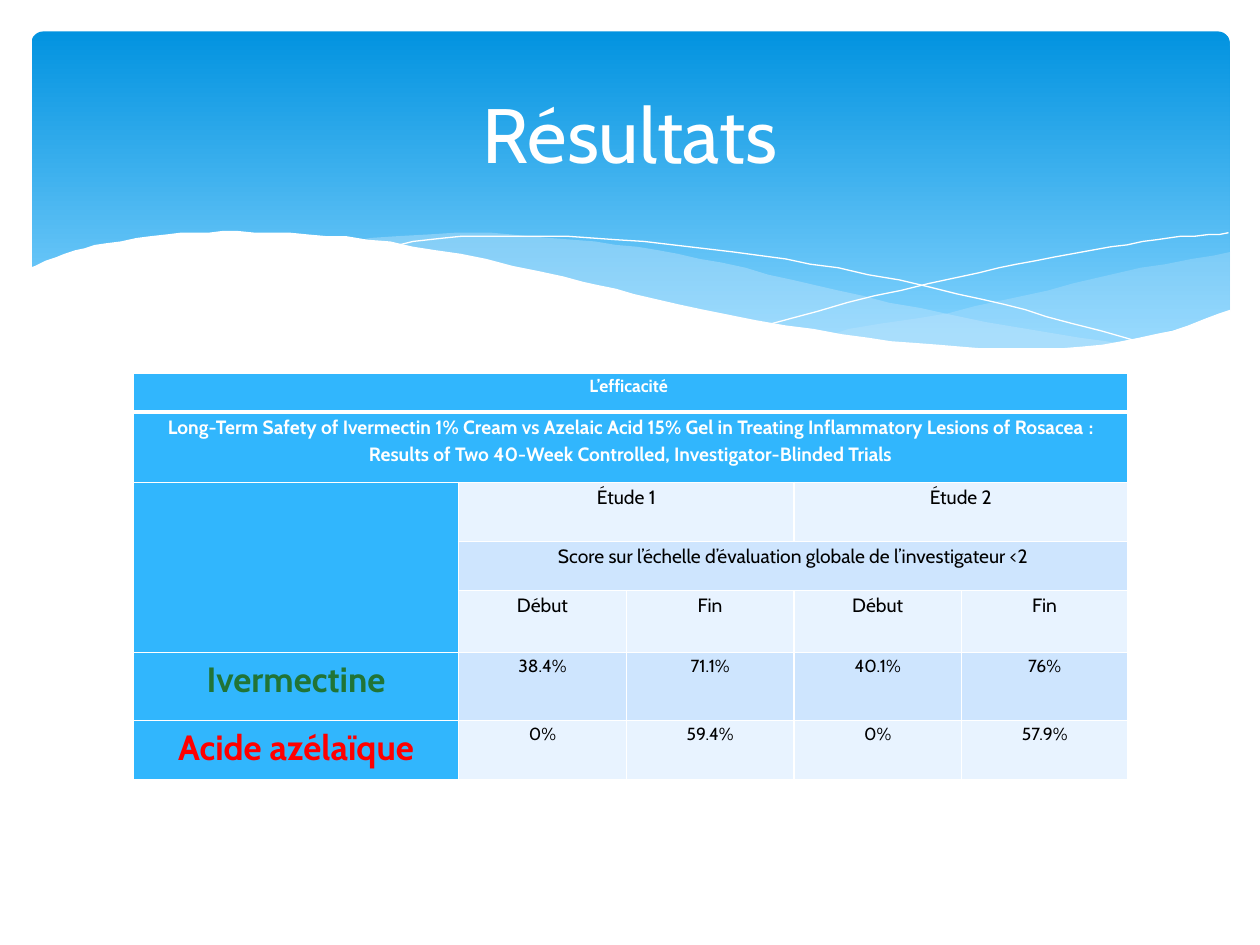
"""Build the results slide: a wave banner, a title and the efficacy table."""
import dataclasses

import pptx
import pptx.dml.color
import pptx.enum.shapes
import pptx.enum.text
import pptx.oxml
import pptx.oxml.ns
import pptx.util

Pt = pptx.util.Pt
RGB = pptx.dml.color.RGBColor.from_string


@dataclasses.dataclass(frozen=True)
class Theme:
    font: str = "Cabin"
    white: str = "FFFFFF"
    black: str = "000000"
    banner_top: str = "0293E0"
    banner_bottom: str = "83D3FE"
    wave: str = "C6E7FC"
    header: str = "31B6FD"
    light: str = "E8F3FF"
    medium: str = "CEE5FE"
    green: str = "217436"
    red: str = "FF0000"
    title_size: float = 44
    drug_size: float = 20
    body_size: float = 11
    small_size: float = 10


def draw_curve(shapes, knots, corners=(), closed=True):
    """Draw a smooth curve through the knots, then straight to the corners."""
    points = [knots[0]]
    padded = [knots[0], *knots, knots[-1]]
    for a, b, c, d in zip(padded, padded[1:], padded[2:], padded[3:]):
        for t in (0.25, 0.5, 0.75, 1):
            points.append(tuple(
                0.5 * (2 * q + (r - p) * t + (2 * p - 5 * q + 4 * r - s) * t ** 2
                       + (3 * q - p - 3 * r + s) * t ** 3)
                for p, q, r, s in zip(a, b, c, d)))
    points.extend(corners)
    builder = shapes.build_freeform(*points[0], scale=Pt(1))
    builder.add_line_segments(points[1:], close=closed)
    shape = builder.convert_to_shape()
    shape.shadow.inherit = False
    return shape


def add_text(paragraph, text, size, color, bold=False):
    """Add one centred run to the paragraph."""
    paragraph.alignment = pptx.enum.text.PP_ALIGN.CENTER
    run = paragraph.add_run()
    run.text = text
    run.font.name = theme.font
    run.font.size = Pt(size)
    run.font.bold = bold
    run.font.color.rgb = RGB(color)


theme = Theme()
presentation = pptx.Presentation()
presentation.slide_width = Pt(720)
presentation.slide_height = Pt(540)
slide = presentation.slides.add_slide(presentation.slide_layouts[6])
shapes = slide.shapes

banner = shapes.add_shape(pptx.enum.shapes.MSO_SHAPE.ROUNDED_RECTANGLE,
                          Pt(18), Pt(18), Pt(684.7), Pt(194.4))
banner.adjustments[0] = 0.034
banner.shadow.inherit = False
banner.line.fill.background()
banner.fill.gradient()
banner.fill.gradient_angle = 270
stops = zip(banner.fill.gradient_stops, (0, 0.9), (theme.banner_top, theme.banner_bottom))
for stop, position, color in stops:
    stop.position = position
    stop.color.rgb = RGB(color)

right_wave = [(702.7, 144), (652.3, 153.4), (599, 165.6), (542.2, 178.6), (475.9, 190.8),
              (517.7, 195.8), (562.3, 199.4), (601.2, 199.4), (634.3, 196.6),
              (668.2, 189.4), (702.7, 177.8)]
middle_wave = [(643, 196.6), (581, 187.2), (508.3, 172.8), (452.9, 159.8), (399.6, 147.6),
               (352.1, 139.7), (302.4, 134.6), (259.9, 133.2), (205.9, 137.5),
               (260.6, 146.2), (323.3, 159.8), (381.6, 172.8), (445, 185.8),
               (500.4, 194.4), (547.9, 199.4), (596.2, 200.2), (643, 196.6)]
falling_line = [(222.5, 140.4), (254.2, 136.1), (299.5, 134.6), (352.1, 136.8), (419, 144),
                (478.8, 153.4), (547.2, 167.8), (598.3, 180.7), (653, 195.8)]
rising_line = [(441.4, 185), (500.4, 169.2), (558.7, 155.5), (601.9, 146.9),
               (644.4, 139.7), (675.4, 135.4), (702, 133.2)]
white_wave = [(703.4, 177.1), (669.6, 188.6), (630, 196.6), (582.5, 199.4), (535.7, 197.3),
              (481, 190.8), (416.9, 180), (362.2, 167.8), (321.8, 158.4), (262.8, 145.4),
              (210.2, 136.8), (165.6, 133.2), (127.4, 132.5), (95, 133.9), (61.2, 139),
              (37.4, 144.7), (16.6, 153.4)]

for knots, opacity in ((right_wave, 29), (middle_wave, 40)):
    wave = draw_curve(shapes, knots)
    wave.fill.solid()
    wave.fill.fore_color.rgb = RGB(theme.wave)
    wave.line.fill.background()
    color_element = wave.fill._xPr.find(".//" + pptx.oxml.ns.qn("a:srgbClr"))
    alpha = pptx.oxml.parse_xml(
        f'<a:alpha {pptx.oxml.ns.nsdecls("a")} val="{opacity * 1000}"/>')
    color_element.append(alpha)

for knots in (falling_line, rising_line):
    line = draw_curve(shapes, knots, closed=False)
    line.fill.background()
    line.line.color.rgb = RGB(theme.white)
    line.line.width = Pt(0)

white_edge = draw_curve(shapes, white_wave, corners=[(16.6, 236.9), (703.4, 236.9)])
white_edge.fill.solid()
white_edge.fill.fore_color.rgb = RGB(theme.white)
white_edge.line.fill.background()

column_widths = (185.8, 95.8, 95.8, 95.8, 95)
row_heights = (22.3, 40.3, 33.8, 28.1, 35.3, 38.9, 33.8)
table = shapes.add_table(len(row_heights), len(column_widths), Pt(76.3), Pt(213.1),
                         Pt(sum(column_widths)), Pt(sum(row_heights))).table
table.first_row = False
table.horz_banding = False
for column, width in zip(table.columns, column_widths):
    column.width = Pt(width)
for row, height in zip(table.rows, row_heights):
    row.height = Pt(height)

contents = [
    ["L’efficacité "],
    ["Long-Term Safety of Ivermectin 1% Cream vs Azelaic Acid 15% Gel in Treating "
     "Inflammatory Lesions of Rosacea\u00a0: Results of Two 40-Week Controlled, "
     "Investigator-Blinded Trials"],
    ["", "Étude 1", "", "Étude 2"],
    ["", "Score sur l’échelle d’évaluation globale de l’investigateur <2"],
    ["", "Début", "Fin", "Début", "Fin"],
    ["Ivermectine", "38.4%", "71.1%", "40.1%", "76%"],
    ["Acide azélaïque", "0%", "59.4%", "0%", "57.9%"],
]
drug_colors = {5: theme.green, 6: theme.red}

for row in range(len(row_heights)):
    for column in range(len(column_widths)):
        cell = table.cell(row, column)
        cell.margin_left = cell.margin_right = Pt(5)
        cell.margin_top = cell.margin_bottom = Pt(0)
        properties = cell._tc.get_or_add_tcPr()
        for side in "LRTB":
            thick = (row, side) in ((0, "B"), (1, "T"))
            properties.append(pptx.oxml.parse_xml(
                f'<a:ln{side} {pptx.oxml.ns.nsdecls("a")} w="{Pt(3 if thick else 1)}">'
                f'<a:solidFill><a:srgbClr val="{theme.white}"/></a:solidFill></a:ln{side}>'))
        is_header = row < 2 or column == 0
        band = theme.medium if row % 2 else theme.light
        cell.fill.solid()
        cell.fill.fore_color.rgb = RGB(theme.header if is_header else band)

for first, last in (((0, 0), (0, 4)), ((1, 0), (1, 4)), ((2, 0), (4, 0)),
                    ((2, 1), (2, 2)), ((2, 3), (2, 4)), ((3, 1), (3, 4))):
    table.cell(*first).merge(table.cell(*last))

for row, texts in enumerate(contents):
    for column, text in enumerate(texts):
        if not text:
            continue
        is_drug = row in drug_colors and column == 0
        size = theme.small_size if row in (0, 5, 6) else theme.body_size
        color = theme.white if row < 2 else theme.black
        paragraph = table.cell(row, column).text_frame.paragraphs[0]
        paragraph.line_spacing = 1.15
        add_text(paragraph, text, theme.drug_size if is_drug else size,
                 drug_colors[row] if is_drug else color, bold=is_drug or row < 2)

title = shapes.add_textbox(Pt(36), Pt(26.6), Pt(648), Pt(98.6))
title.text_frame.word_wrap = True
title.text_frame.vertical_anchor = pptx.enum.text.MSO_ANCHOR.MIDDLE
add_text(title.text_frame.paragraphs[0], "Résultats", theme.title_size, theme.white)

presentation.save("out.pptx")
